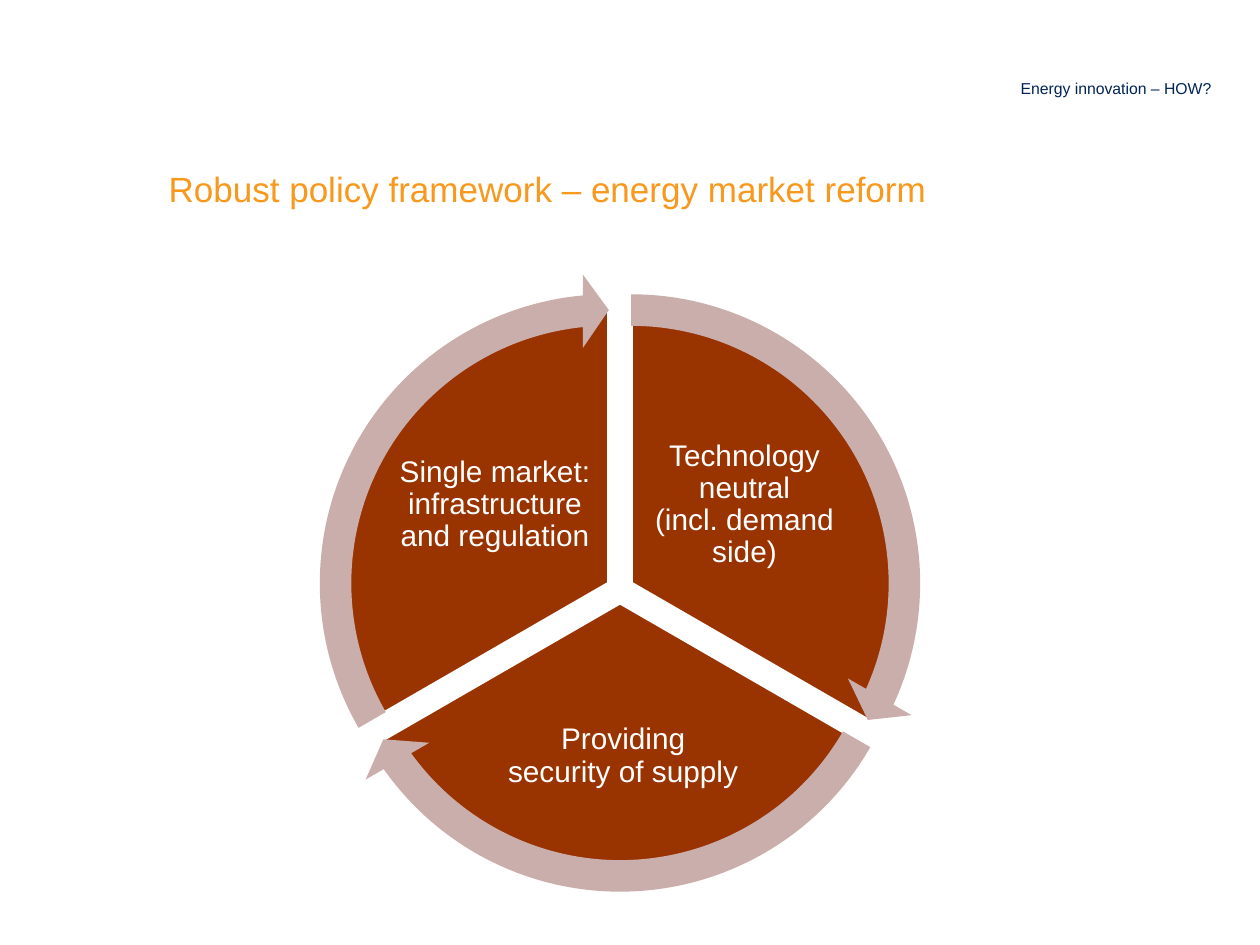
from math import cos, radians, sin

from pptx import Presentation
from pptx.dml.color import RGBColor
from pptx.enum.shapes import MSO_SHAPE as Preset
from pptx.enum.text import MSO_ANCHOR as Anchor, MSO_AUTO_SIZE as AutoSize, PP_ALIGN as Align
from pptx.util import Cm, Pt

HUB_X, HUB_Y = 12.5, 11.89
GAP = 0.26  # distance of each sector from the hub
PIE_SIZE, ARROW_SIZE = 11.13, 12.5
SWEEP = 120
ARROW_STOP = 5.46  # degrees the arrow body ends before its sector does
DEGREE = 0.6  # adjustment units per degree

# Start angle, label and label box (left, top, width, height) in cm
SECTORS = [
    (270, "Technology neutral\v(incl. demand side)", (13.03, 8.53, 3.96, 3.3)),
    (30, "Providing\vsecurity of supply", (9.58, 13.79, 5.97, 2.92)),
    (150, "Single market: infrastructure and regulation", (8.0, 8.53, 3.96, 3.3)),
]


def color(value):
    return RGBColor.from_string(value)


def write(shape, text, size=17, font_color="FFFFFF", font="Arial", align=Align.LEFT,
          anchor=Anchor.TOP, insets=(0.25, 0.13, 0.25, 0.13), spacing=None):
    frame = shape.text_frame
    frame.word_wrap = True
    frame.auto_size = AutoSize.NONE
    frame.vertical_anchor = anchor
    (frame.margin_left, frame.margin_top,
     frame.margin_right, frame.margin_bottom) = map(Cm, insets)
    paragraph = frame.paragraphs[0]
    paragraph.text = text
    paragraph.alignment = align
    paragraph.line_spacing = spacing
    for run in paragraph.runs:
        run.font.name = font
        run.font.size = Pt(size)
        run.font.color.rgb = color(font_color)


class CycleSlide:
    pie_fill = "993300"
    arrow_fill = "CAAEAB"
    outline = "FFFFFF"

    def __init__(self, presentation):
        self.slide = presentation.slides.add_slide(presentation.slide_layouts[5])

    def title(self, text, box, **style):
        shape = self.slide.shapes.title
        shape.left, shape.top, shape.width, shape.height = map(Cm, box)
        write(shape, text, **style)

    def text(self, text, box, **style):
        write(self.slide.shapes.add_textbox(*map(Cm, box)), text, **style)

    def round_shape(self, preset, start, size, fill, adjustments):
        """Add a round shape pushed out of the hub along its sector's middle."""
        middle = radians(start + SWEEP / 2)
        left = HUB_X + GAP * cos(middle) - size / 2
        top = HUB_Y + GAP * sin(middle) - size / 2
        shape = self.slide.shapes.add_shape(preset, Cm(left), Cm(top), Cm(size), Cm(size))
        shape.shadow.inherit = False
        shape.fill.solid()
        shape.fill.fore_color.rgb = color(fill)
        shape.line.fill.background()
        for index, value in enumerate(adjustments):
            shape.adjustments[index] = value
        return shape

    def sector(self, start):
        end = (start + SWEEP) % 360
        shape = self.round_shape(Preset.PIE, start, PIE_SIZE, self.pie_fill,
                                 (start * DEGREE, end * DEGREE))
        shape.line.color.rgb = color(self.outline)
        shape.line.width = Pt(2)

    def arrow(self, start):
        end = (start + SWEEP) % 360 - ARROW_STOP
        self.round_shape(Preset.CIRCULAR_ARROW, start, ARROW_SIZE, self.arrow_fill,
                         (0.05085, 3.275, end * DEGREE, start * DEGREE, 0.05932))


def main():
    presentation = Presentation()
    presentation.slide_width, presentation.slide_height = Cm(25.4), Cm(19.05)
    cycle = CycleSlide(presentation)

    # Header and heading
    cycle.title("Energy innovation – HOW?", (4.5, 0.71, 20.17, 1.4), size=9,
                font_color="002457", align=Align.RIGHT, anchor=Anchor.BOTTOM)
    cycle.text("Robust policy framework – energy market reform", (3.15, 3.07, 18.67, 1.3),
               size=20, font_color="F8981D", insets=(0.25, 0.3, 0.25, 0.13))

    # Sectors with their labels
    for start, label, box in SECTORS:
        cycle.sector(start)
        cycle.text(label, box, align=Align.CENTER, anchor=Anchor.MIDDLE,
                   insets=(0.05,) * 4, spacing=0.9)

    # Arrows around the sectors
    for start, _, _ in SECTORS:
        cycle.arrow(start)

    presentation.save("out.pptx")


if __name__ == "__main__":
    main()
